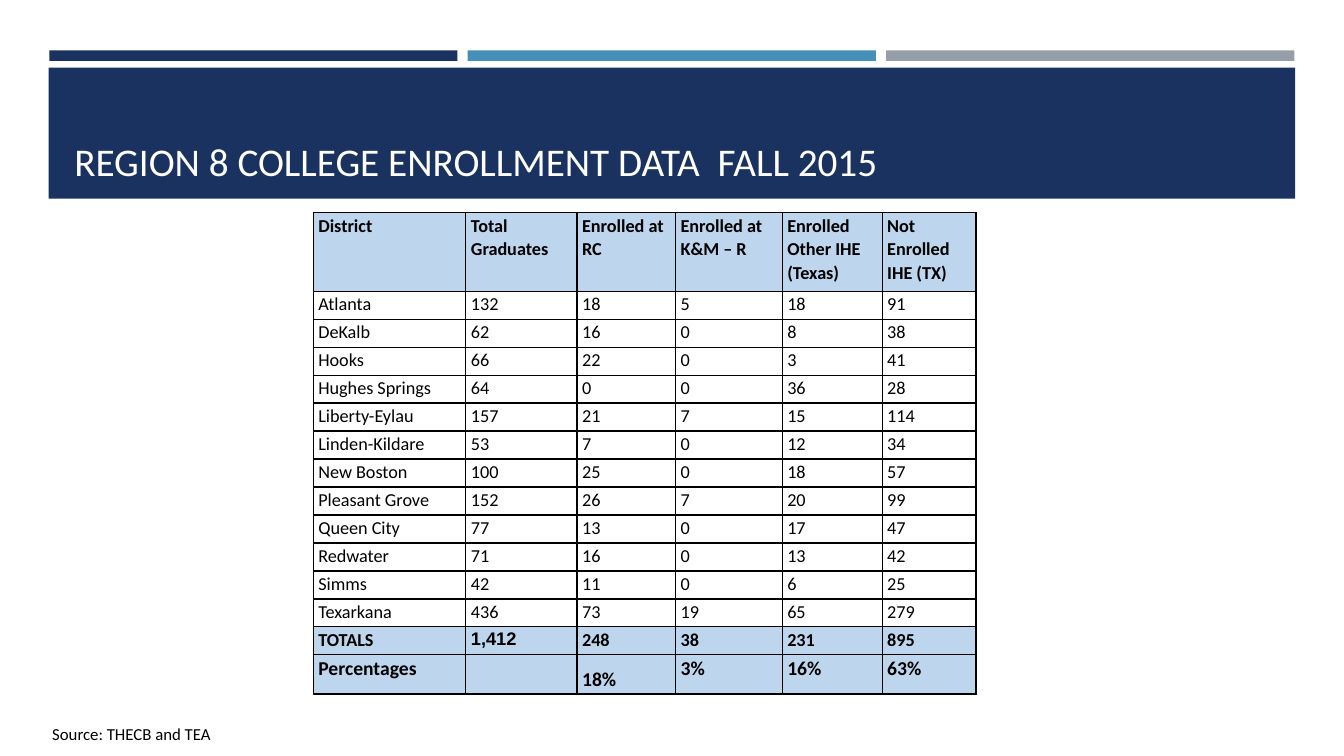
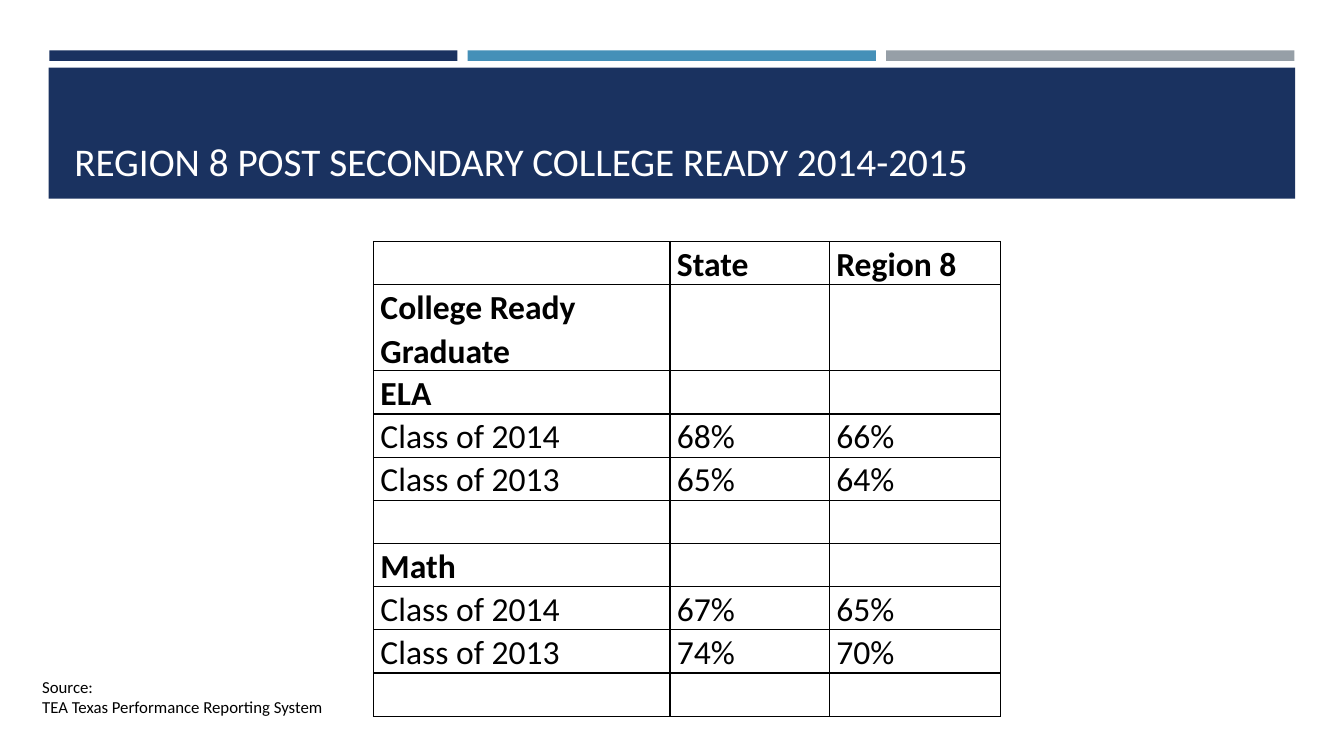
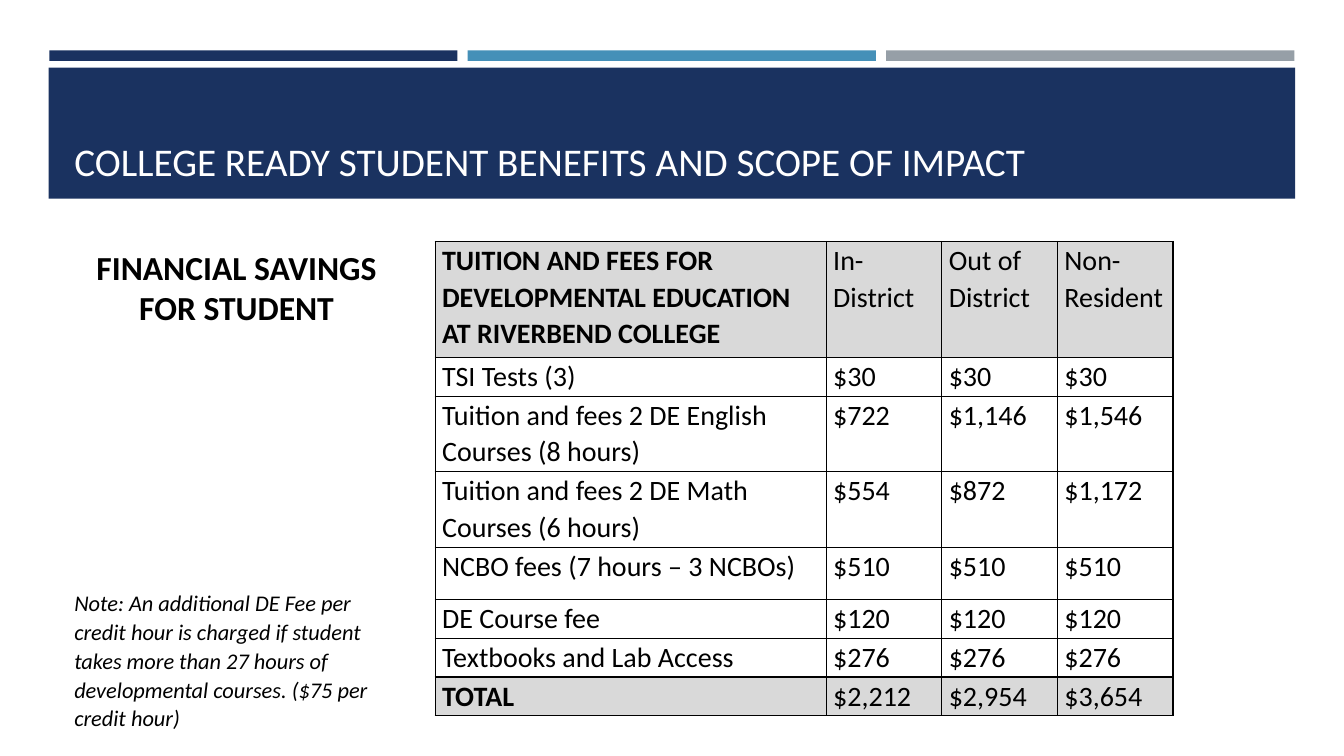
from lxml import etree
from pptx import Presentation
from pptx.dml.color import RGBColor
from pptx.enum.shapes import MSO_SHAPE
from pptx.enum.text import MSO_ANCHOR, PP_ALIGN
from pptx.oxml.ns import qn
from pptx.util import Pt

RECTANGLE = MSO_SHAPE.RECTANGLE
TOP, BOTTOM = MSO_ANCHOR.TOP, MSO_ANCHOR.BOTTOM
LEFT, CENTER = PP_ALIGN.LEFT, PP_ALIGN.CENTER

NAVY, BLUE, GRAY = "1A3260", "4590B8", "969FA7"
BLACK, WHITE = "000000", "FFFFFF"
LIGHT_BLUE, LIGHT_GRAY = "BDD6EE", "D9D9D9"
BODY_FONT = "Calibri"

ENROLLMENT = [
    ["District", "Total Graduates", "Enrolled at RC", "Enrolled at K&M – R",
     "Enrolled Other IHE\n(Texas)", "Not Enrolled IHE (TX)"],
    ["Atlanta", "132", "18", "5", "18", "91"],
    ["DeKalb", "62", "16", "0", "8", "38"],
    ["Hooks", "66", "22", "0", "3", "41"],
    ["Hughes Springs", "64", "0", "0", "36", "28"],
    ["Liberty-Eylau", "157", "21", "7", "15", "114"],
    ["Linden-Kildare", "53", "7", "0", "12", "34"],
    ["New Boston", "100", "25", "0", "18", "57"],
    ["Pleasant Grove", "152", "26", "7", "20", "99"],
    ["Queen City", "77", "13", "0", "17", "47"],
    ["Redwater", "71", "16", "0", "13", "42"],
    ["Simms", "42", "11", "0", "6", "25"],
    ["Texarkana", "436", "73", "19", "65", "279"],
    ["TOTALS", "1,412", "248", "38", "231", "895"],
    ["Percentages", "", "18%", "3%", "16%", "63%"],
]
READINESS = [
    ["", "State", "Region 8"],
    ["College Ready Graduate", "", ""],
    ["ELA", "", ""],
    ["Class of 2014", "68%", "66%"],
    ["Class of 2013", "65%", "64%"],
    ["", "", ""],
    ["Math", "", ""],
    ["Class of 2014", "67%", "65%"],
    ["Class of 2013", "74%", "70%"],
    ["", "", ""],
]
TUITION = [
    ["TUITION AND FEES FOR DEVELOPMENTAL EDUCATION\nAT RIVERBEND COLLEGE",
     "In-District", "Out of District", "Non-Resident"],
    ["TSI Tests (3)", "$30", "$30", "$30"],
    ["Tuition and fees 2 DE English Courses (8 hours)", "$722", "$1,146", "$1,546"],
    ["Tuition and fees 2 DE Math Courses (6 hours)", "$554", "$872", "$1,172"],
    ["NCBO fees (7 hours – 3 NCBOs)", "$510", "$510", "$510"],
    ["DE Course fee", "$120", "$120", "$120"],
    ["Textbooks and Lab Access", "$276", "$276", "$276"],
    ["TOTAL", "$2,212", "$2,954", "$3,654"],
]


def color(value):
    return RGBColor.from_string(value)


def write(frame, text, size=12, font=BODY_FONT, ink=BLACK, bold=False,
          italic=False, align=LEFT, spacing=1.0):
    frame.word_wrap = True
    for index, line in enumerate(text.split("\n")):
        paragraph = frame.add_paragraph() if index else frame.paragraphs[0]
        paragraph.alignment = align
        paragraph.line_spacing = spacing
        if line:
            run = paragraph.add_run()
            run.text = line
            run.font.size = Pt(size)
            run.font.name = font
            run.font.color.rgb = color(ink)
            run.font.bold = bold
            run.font.italic = italic


def add_text(slide, text, left, top, width, height, anchor=TOP, **style):
    frame = slide.shapes.add_textbox(Pt(left), Pt(top), Pt(width), Pt(height)).text_frame
    frame.vertical_anchor = anchor
    write(frame, text, **style)


def add_band(slide, left, top, width, height, fill):
    band = slide.shapes.add_shape(RECTANGLE, Pt(left), Pt(top), Pt(width), Pt(height))
    band.shadow.inherit = False
    band.fill.solid()
    band.fill.fore_color.rgb = color(fill)
    band.line.fill.background()


def add_borders(cell):
    properties = cell._tc.get_or_add_tcPr()
    for side in ("lnL", "lnR", "lnT", "lnB"):
        line = etree.SubElement(properties, qn(f"a:{side}"), w=str(Pt(1)))
        fill = etree.SubElement(line, qn("a:solidFill"))
        etree.SubElement(fill, qn("a:srgbClr"), val=BLACK)


def add_grid(slide, rows, left, top, widths, heights, cell_style, inset=(5, 0)):
    table = slide.shapes.add_table(len(rows), len(widths), Pt(left), Pt(top),
                                   Pt(sum(widths)), Pt(sum(heights))).table
    table.first_row = table.horz_banding = False
    for column, width in zip(table.columns, widths):
        column.width = Pt(width)
    for row, height in zip(table.rows, heights):
        row.height = Pt(height)
    for r, values in enumerate(rows):
        for c, value in enumerate(values):
            cell = table.cell(r, c)
            style = cell_style(r, c)
            fill = style.pop("fill", None)
            cell.margin_left = cell.margin_right = Pt(inset[0])
            cell.margin_top, cell.margin_bottom = Pt(inset[1]), Pt(0)
            add_borders(cell)
            if fill:
                cell.fill.solid()
                cell.fill.fore_color.rgb = color(fill)
            else:
                cell.fill.background()
            write(cell.text_frame, value, **style)


def enrollment_style(r, c):
    summary = r in (0, 13, 14)
    return {
        "size": 14 if r == 14 else 13,
        "font": "Arial" if (r, c) == (13, 1) else BODY_FONT,
        "bold": summary,
        "spacing": 1.5 if (r, c) == (14, 2) else 1.06,
        "fill": LIGHT_BLUE if summary else None,
    }


def readiness_style(r, c):
    return {"size": 24, "bold": r in (0, 1, 2, 6), "spacing": 1.07}


def tuition_style(r, c):
    summary = r in (0, 7)
    return {"size": 20, "bold": summary and c == 0, "spacing": 1.07,
            "fill": LIGHT_GRAY if summary else None}


def add_slide(deck, title):
    slide = deck.slides.add_slide(deck.slide_layouts[6])
    for index, fill in enumerate((NAVY, BLUE, GRAY)):
        add_band(slide, 35.2 + index * 298.9, 36, 291.6, 7.5, fill)
    add_band(slide, 34.8, 48.4, 890.4, 93.6, NAVY)
    add_text(slide, title, 46, 55.4, 868, 80, anchor=BOTTOM, size=28, ink=WHITE)
    return slide


def main():
    deck = Presentation()
    deck.slide_width, deck.slide_height = Pt(960), Pt(540)

    enrollment = add_slide(deck, "REGION 8 COLLEGE ENROLLMENT DATA  FALL 2015")
    add_text(enrollment, "Source: THECB and TEA", 30.2, 513.4, 366, 22)
    add_grid(enrollment, ENROLLMENT, 223.8, 152, [109, 79.4, 70.4, 76.2, 71.4, 67],
             [56] + [20] * 13 + [28], enrollment_style, inset=(3.6, 0.7))

    readiness = add_slide(deck, "REGION 8 POST SECONDARY COLLEGE READY 2014-2015")
    add_text(readiness, "Source:\nTEA Texas Performance Reporting System", 23, 479.5, 237, 36)
    add_grid(readiness, READINESS, 266.8, 172.4, [211.8, 113.8, 122.4],
             [30.8, 61.6] + [30.8] * 8, readiness_style)

    benefits = add_slide(deck, "COLLEGE READY STUDENT BENEFITS AND SCOPE OF IMPACT")
    add_text(benefits, "FINANCIAL SAVINGS FOR STUDENT", 46, 172.8, 246, 94,
             size=24, bold=True, align=CENTER)
    add_grid(benefits, TUITION, 310.8, 172.4, [279.4] + [82.6] * 3,
             [83, 27.6, 54, 54, 37.4, 27.6, 27.6, 27.6], tuition_style)
    add_text(benefits, "Note: An additional DE Fee per credit hour is charged if student "
             "takes more than 27 hours of developmental courses. ($75 per credit hour)",
             46, 416.2, 235.4, 111, size=16, italic=True, spacing=1.07)

    deck.save("out.pptx")


if __name__ == "__main__":
    main()
